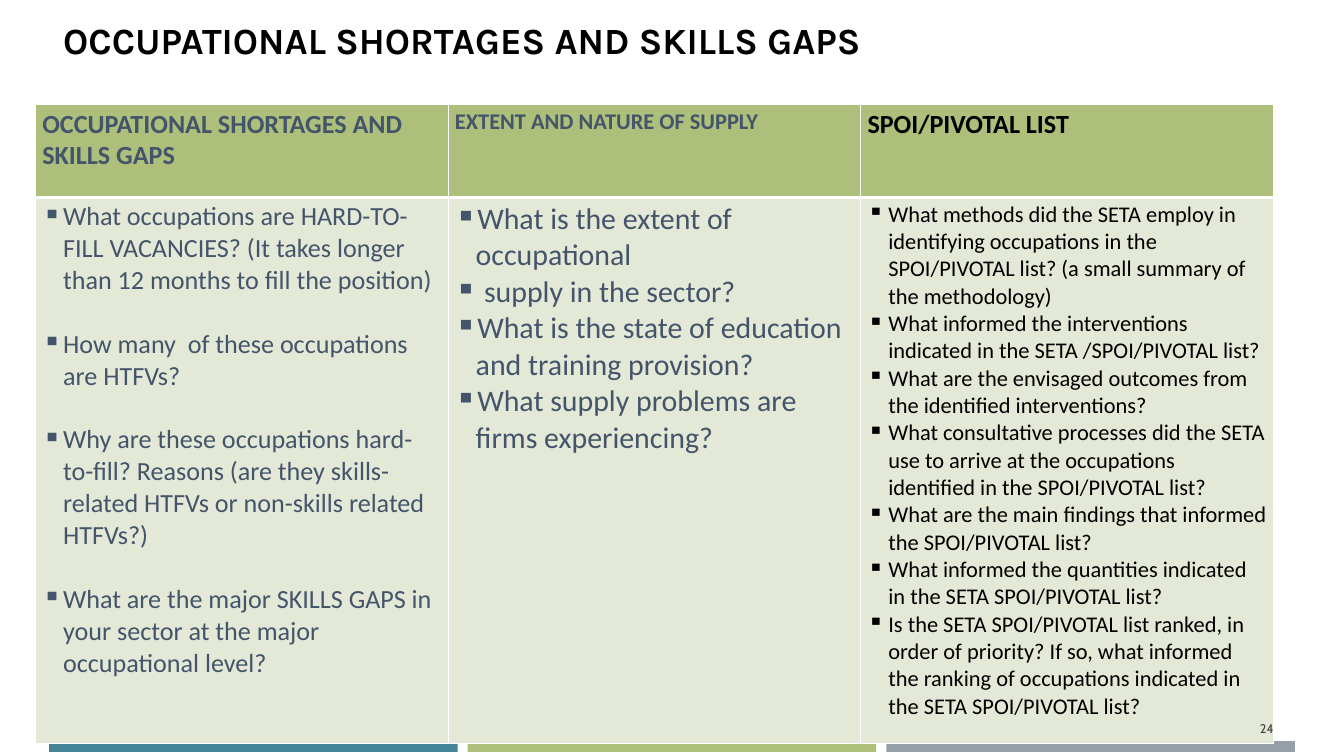
import pptx
import pptx.dml.color
import pptx.enum.shapes
import pptx.enum.text
import pptx.oxml
import pptx.oxml.ns
import pptx.util
from pptx.util import Inches

RGBColor = pptx.dml.color.RGBColor
Align = pptx.enum.text.PP_ALIGN
Anchor = pptx.enum.text.MSO_ANCHOR

TEAL = RGBColor(0x46, 0x84, 0x98)
GREEN = RGBColor(0xAD, 0xBF, 0x7B)
GREY = RGBColor(0x96, 0x9F, 0xA7)
PALE_GREEN = RGBColor(0xE3, 0xE8, 0xD7)
SLATE = RGBColor(0x44, 0x54, 0x6A)
BLACK = RGBColor(0, 0, 0)
DARK_GREY = RGBColor(0x40, 0x40, 0x40)
WHITE = RGBColor(0xFF, 0xFF, 0xFF)

COLUMNS = [
    {
        "heading": "OCCUPATIONAL SHORTAGES AND SKILLS GAPS",
        "heading_size": 28, "size": 28, "color": SLATE, "gap": 34,
        "questions": [
            "What occupations are HARD-TO-FILL VACANCIES? (It takes longer than 12 months to fill the position)",
            "How many  of these occupations are HTFVs?",
            "Why are these occupations hard-to-fill? Reasons (are they skills-related HTFVs or non-skills related HTFVs?)",
            "What are the major SKILLS GAPS in your sector at the major occupational level?",
        ],
    },
    {
        "heading": "EXTENT AND NATURE OF SUPPLY",
        "heading_size": 24, "size": 32, "color": SLATE, "gap": 0,
        "questions": [
            "What is the extent of occupational",
            " supply in the sector?",
            "What is the state of education and training provision?",
            "What supply problems are firms experiencing?",
        ],
    },
    {
        "heading": "SPOI/PIVOTAL LIST",
        "heading_size": 28, "size": 24, "color": BLACK, "gap": 0,
        "questions": [
            "What methods did the SETA employ in identifying occupations in the SPOI/PIVOTAL list? (a small summary of the methodology)",
            "What informed the interventions indicated in the SETA /SPOI/PIVOTAL list?",
            "What are the envisaged outcomes from the identified interventions?",
            "What consultative processes did the SETA use to arrive at the occupations identified in the SPOI/PIVOTAL list?",
            "What are the main findings that informed the SPOI/PIVOTAL list?",
            "What informed the quantities indicated in the SETA SPOI/PIVOTAL list?",
            "Is the SETA SPOI/PIVOTAL list ranked, in order of priority? If so, what informed the ranking of occupations indicated in the SETA SPOI/PIVOTAL list?",
        ],
    },
]


def set_all(target, values):
    """Set every attribute named in values on target."""
    for name, value in values.items():
        setattr(target, name, value)


def write(paragraph, text, color, size, name="Calibri", bold=False):
    """Add a formatted run to a paragraph."""
    run = paragraph.add_run()
    run.text = text
    set_all(run.font, {"name": name, "size": pptx.util.Pt(size), "bold": bold})
    run.font.color.rgb = color


def add_bullet(paragraph):
    """Give a paragraph a square bullet with a hanging indent."""
    properties = paragraph._p.get_or_add_pPr()
    properties.set("marL", str(Inches(0.31)))
    properties.set("indent", str(Inches(-0.31)))
    properties.append(pptx.oxml.parse_xml(
        f'<a:buChar {pptx.oxml.ns.nsdecls("a")} char="▪"/>'))


def format_cell(cell, fill, widths):
    """Fill a cell and draw its white borders, widths in points by side."""
    cell.fill.solid()
    cell.fill.fore_color.rgb = fill
    properties = cell._tc.get_or_add_tcPr()
    for position, (side, width) in enumerate(widths.items()):
        properties.insert(position, pptx.oxml.parse_xml(
            f'<a:ln{side} {pptx.oxml.ns.nsdecls("a")} w="{pptx.util.Pt(width)}">'
            f'<a:solidFill><a:srgbClr val="{WHITE}"/></a:solidFill></a:ln{side}>'))


def add_footer_bars(slide, left, top, width, height):
    """Draw three equal colour bars across the box."""
    gap = Inches(0.15)
    bar_width = (width - 2 * gap) // 3
    for index, color in enumerate((TEAL, GREEN, GREY)):
        bar = slide.shapes.add_shape(
            pptx.enum.shapes.MSO_SHAPE.RECTANGLE,
            left + index * (bar_width + gap), top, bar_width, height)
        bar.shadow.inherit = False
        bar.fill.solid()
        bar.fill.fore_color.rgb = color
        bar.line.fill.background()


def add_title(slide, left, top, width, height):
    """Place and format the title placeholder."""
    title = slide.shapes.title
    set_all(title, {"left": left, "top": top, "width": width, "height": height})
    set_all(title.text_frame, {
        "word_wrap": True, "vertical_anchor": Anchor.TOP,
        "auto_size": pptx.enum.text.MSO_AUTO_SIZE.NONE,
        "margin_left": Inches(0.12), "margin_top": 0})
    paragraph = title.text_frame.paragraphs[0]
    paragraph.alignment = Align.LEFT
    write(paragraph, "OCCUPATIONAL SHORTAGES AND SKILLS GAPS", BLACK, 39.6, "Karla", True)


def add_question_table(slide, left, top, width, height):
    """Build the table of headings and bulleted questions."""
    table = slide.shapes.add_table(2, len(COLUMNS), left, top, width, height).table
    header_height = Inches(1.38)
    table.rows[0].height = header_height
    table.rows[1].height = height - header_height
    for index, column in enumerate(COLUMNS):
        table.columns[index].width = width // len(COLUMNS)
        header, body = table.cell(0, index), table.cell(1, index)
        format_cell(header, GREEN, {"L": 1, "R": 1, "T": 1, "B": 3})
        format_cell(body, PALE_GREEN, {"L": 1, "R": 1, "T": 3, "B": 1})
        write(header.text_frame.paragraphs[0], column["heading"],
              column["color"], column["heading_size"], bold=True)
        for number, question in enumerate(column["questions"]):
            frame = body.text_frame
            paragraph = frame.add_paragraph() if number else frame.paragraphs[0]
            add_bullet(paragraph)
            if number:
                paragraph.space_before = pptx.util.Pt(column["gap"])
            write(paragraph, question, column["color"], column["size"])


def add_page_number(slide, left, top, width, height):
    """Write the page number at the right of the box."""
    frame = slide.shapes.add_textbox(left, top, width, height).text_frame
    set_all(frame, {"word_wrap": True, "vertical_anchor": Anchor.MIDDLE})
    frame.paragraphs[0].alignment = Align.RIGHT
    write(frame.paragraphs[0], "24", DARK_GREY, 13.5, "Cabin")


def main():
    """Build the slide and save it."""
    presentation = pptx.Presentation()
    set_all(presentation, {"slide_width": Inches(20), "slide_height": Inches(11.25)})
    slide = presentation.slides.add_slide(presentation.slide_layouts[5])
    add_footer_bars(slide, Inches(0.73), Inches(11.03), Inches(18.54), Inches(0.16))
    add_title(slide, Inches(0.82), Inches(0.26), Inches(15.09), Inches(1.27))
    add_question_table(slide, Inches(0.53), Inches(1.56), Inches(18.42), Inches(9.51))
    add_page_number(slide, Inches(17.32), Inches(10.54), Inches(1.73), Inches(0.6))
    presentation.save("out.pptx")


if __name__ == "__main__":
    main()
